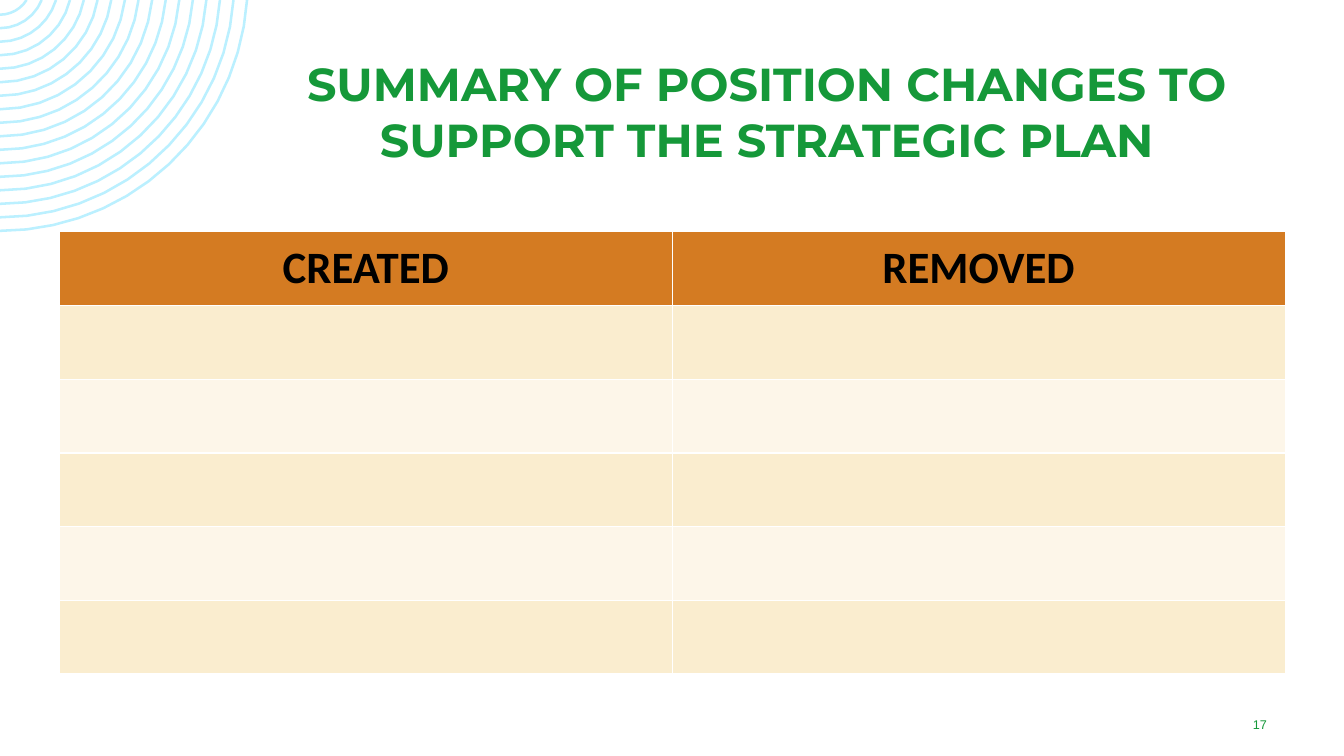
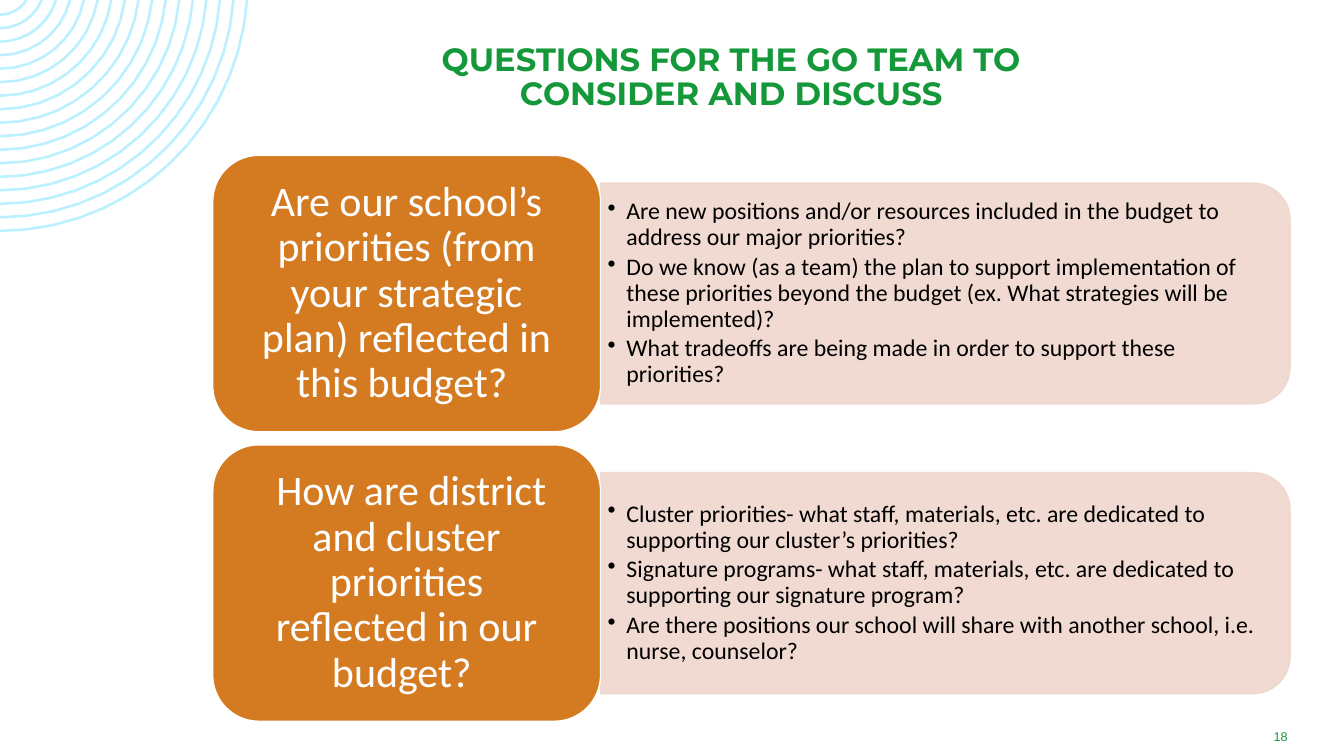
import math

from lxml import etree
from pptx import Presentation
from pptx.dml.color import RGBColor
from pptx.enum import shapes, text
from pptx.oxml.ns import qn
from pptx.util import Pt

GREEN, ORANGE, PINK, CYAN = "159839", "D47B22", "EFD7CD", "BBF0FF"
BLACK, WHITE = "000000", "FFFFFF"
ROW_BANDS = ("FAEDCF", "FDF6E9")

SUMMARY_TITLE = "SUMMARY OF POSITION CHANGES TO SUPPORT THE STRATEGIC PLAN"
COLUMNS = ["CREATED", "REMOVED"]
EMPTY_ROWS = 5

QUESTIONS_TITLE = "QUESTIONS FOR THE GO TEAM TO CONSIDER AND DISCUSS"
QUESTIONS = [
    ("Are our school’s priorities (from your strategic plan) reflected in this budget? ", [
        "Are new positions and/or resources included in the budget to address our major priorities?",
        "Do we know (as a team) the plan to support implementation of these priorities beyond "
        "the budget (ex. What strategies will be implemented)?",
        "What tradeoffs are being made in order to support these priorities?",
    ]),
    (" How are district and cluster priorities reflected in our budget? ", [
        "Cluster priorities- what staff, materials, etc. are dedicated to supporting our "
        "cluster’s priorities?",
        "Signature programs- what staff, materials, etc. are dedicated to supporting our "
        "signature program?",
        "Are there positions our school will share with another school, i.e. nurse, counselor?",
    ]),
]


def rgb(color):
    return RGBColor.from_string(color)


def box(left, top, width, height):
    return Pt(left), Pt(top), Pt(width), Pt(height)


def write(tf, paragraphs, size, color, font="Calibri", bold=False, align="CENTER",
          anchor="MIDDLE", inset=(7.2, 3.6), line=1.0, after=0, bullet_indent=0):
    tf.word_wrap = True
    tf.auto_size = text.MSO_AUTO_SIZE.NONE
    tf.vertical_anchor = text.MSO_ANCHOR[anchor]
    tf.margin_left = tf.margin_right = Pt(inset[0])
    tf.margin_top = tf.margin_bottom = Pt(inset[1])
    for i, words in enumerate(paragraphs):
        p = tf.add_paragraph() if i else tf.paragraphs[0]
        p.alignment = text.PP_ALIGN[align]
        p.line_spacing, p.space_after = line, Pt(after)
        r = p.add_run()
        r.text = words
        r.font.size, r.font.name, r.font.bold = Pt(size), font, bold
        r.font.color.rgb = rgb(color)
        if bullet_indent:
            pPr = p._p.get_or_add_pPr()
            pPr.set("marL", str(Pt(bullet_indent)))
            pPr.set("indent", str(-Pt(bullet_indent)))
            etree.SubElement(pPr, qn("a:buChar"), char="•")


def paint(sp, fill, line, line_width=1, alpha=None):
    sp.shadow.inherit = False
    if fill:
        sp.fill.solid()
        sp.fill.fore_color.rgb = rgb(fill)
    else:
        sp.fill.background()
    sp.line.color.rgb = rgb(line)
    sp.line.width = Pt(line_width)
    if alpha:
        for clr in list(sp._element.spPr.iter(qn("a:srgbClr"))):
            etree.SubElement(clr, qn("a:alpha"), val=str(alpha * 1000))
    return sp


def add_rings(slide, count=17, center_y=-12, smallest=22.5, step=9.65):
    """Concentric arcs around a point just above the top left corner."""
    builder = None
    for i in range(count):
        radius = smallest + i * step
        start = math.asin(-center_y / radius)
        steps = 6 + i // 2
        angles = [start + (math.pi / 2 - start) * k / steps for k in range(steps + 1)]
        points = [(Pt(radius * math.cos(a)), Pt(center_y + radius * math.sin(a)))
                  for a in angles]
        if builder is None:
            builder = slide.shapes.build_freeform(*points[0], scale=1.0)
        else:
            builder.move_to(*points[0])
        builder.add_line_segments(points[1:], close=False)
    return paint(builder.convert_to_shape(), None, CYAN, 1.8)


def add_slide(prs, layout, title, title_box, title_size, number, number_box, line=1.0):
    slide = prs.slides.add_slide(layout)
    sp = slide.shapes.title
    sp.left, sp.top, sp.width, sp.height = box(*title_box)
    write(sp.text_frame, [title], title_size, GREEN, "Montserrat", bold=True,
          anchor="TOP", line=line)
    tb = slide.shapes.add_textbox(*box(*number_box))
    write(tb.text_frame, [number], 9, GREEN, "Arial")
    return slide


def add_changes_table(slide):
    rows = EMPTY_ROWS + 1
    table = slide.shapes.add_table(rows, len(COLUMNS), *box(42.5, 165.6, 875.5, 316)).table
    for r in range(rows):
        for c, heading in enumerate(COLUMNS):
            cell = table.cell(r, c)
            cell.fill.solid()
            cell.fill.fore_color.rgb = rgb(ROW_BANDS[(r - 1) % 2] if r else ORANGE)
            if r == 0:
                cell.vertical_anchor = text.MSO_ANCHOR.MIDDLE
                p = cell.text_frame.paragraphs[0]
                p.alignment = text.PP_ALIGN.CENTER
                run = p.add_run()
                run.text = heading
                run.font.size, run.font.name, run.font.bold = Pt(32), "Calibri", True
                run.font.color.rgb = rgb(BLACK)


def add_question(slide, top, question, details):
    left, width, height = 152, 277, 197.4
    panel_width, panel_height = 492.5, 157.8
    right, middle = left + width, top + height / 2
    preset = shapes.MSO_SHAPE

    panel = slide.shapes.add_shape(preset.ROUND_2_SAME_RECTANGLE, *box(
        right + (panel_width - panel_height) / 2, middle - panel_width / 2,
        panel_height, panel_width))
    panel.rotation = 90
    paint(panel, PINK, PINK, alpha=90)
    tb = slide.shapes.add_textbox(*box(right, middle - 71, 485, 142))
    write(tb.text_frame, details, 17, BLACK, align="LEFT", inset=(5, 3), line=0.9,
          after=3, bullet_indent=13.5)

    card = slide.shapes.add_shape(preset.ROUNDED_RECTANGLE, *box(left, top, width, height))
    paint(card, ORANGE, WHITE)
    write(card.text_frame, [question], 30, WHITE, inset=(18, 14.4), line=0.9)


def main():
    prs = Presentation()
    prs.slide_width, prs.slide_height = Pt(960), Pt(540)
    layout = prs.slide_layouts.get_by_name("Title Only")

    summary = add_slide(prs, layout, SUMMARY_TITLE, (177, 36, 741.5, 106), 33,
                        "17", (861, 507, 78, 21.6))
    layout.shapes.element.append(add_rings(summary)._element)
    add_changes_table(summary)

    questions = add_slide(prs, layout, QUESTIONS_TITLE, (250, 27.4, 545, 60.5), 23,
                          "18", (885.6, 515, 58.3, 21.6), line=0.9)
    for i, (question, details) in enumerate(QUESTIONS):
        add_question(questions, 111 + i * 206.8, question, details)

    prs.save("out.pptx")


if __name__ == "__main__":
    main()
